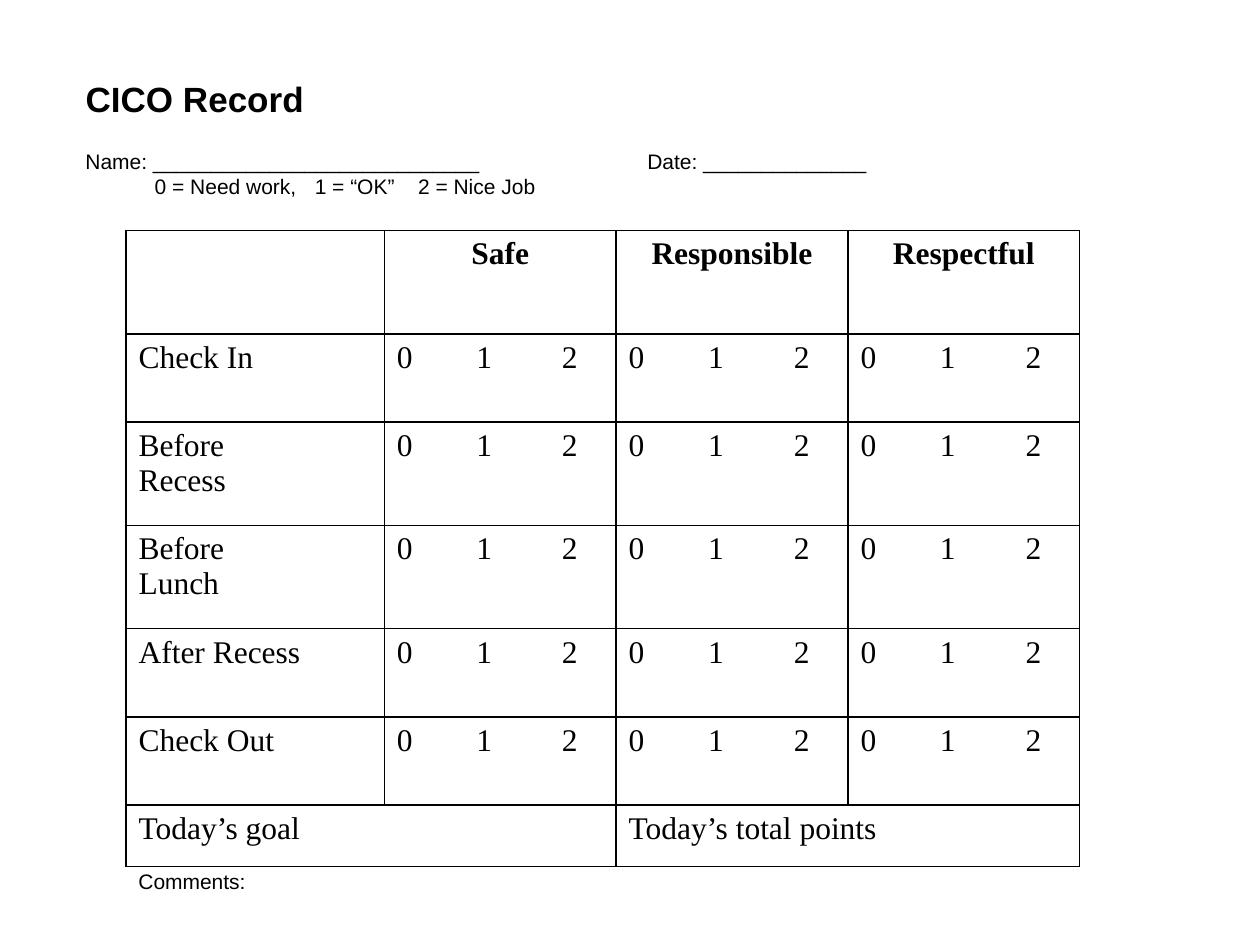
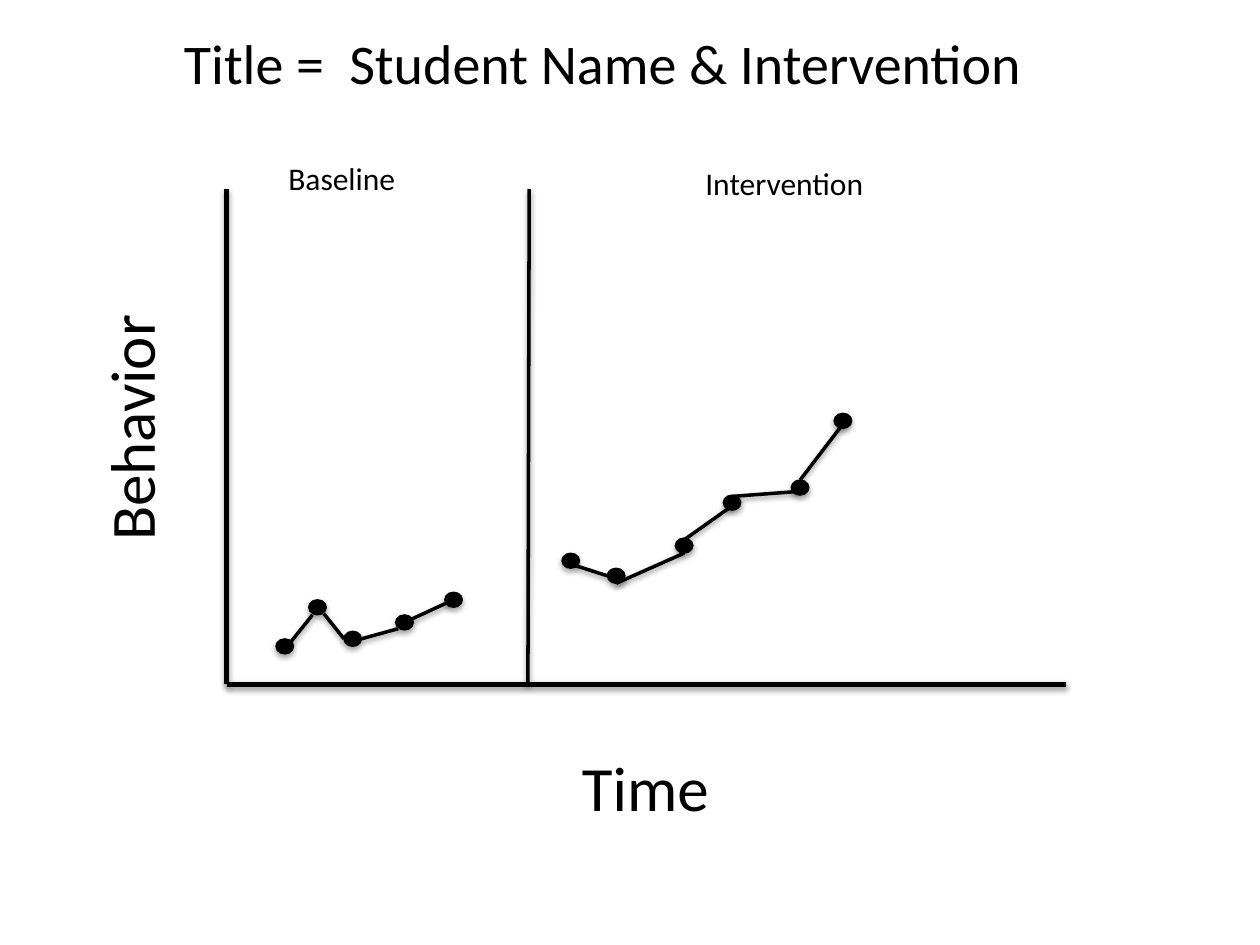
from lxml import etree
from pptx import Presentation
from pptx.dml.color import RGBColor
from pptx.enum.shapes import MSO_CONNECTOR, MSO_SHAPE
from pptx.enum.text import MSO_ANCHOR, MSO_AUTO_SIZE, PP_ALIGN
from pptx.oxml.ns import qn
from pptx.util import Emu, Pt

PX = 9144  # 100 px to the inch
BLACK = RGBColor(0, 0, 0)
LEFT, CENTER = PP_ALIGN.LEFT, PP_ALIGN.CENTER
TOP, MIDDLE = MSO_ANCHOR.TOP, MSO_ANCHOR.MIDDLE
NO_AUTOSIZE = MSO_AUTO_SIZE.NONE
STRAIGHT, ELLIPSE = MSO_CONNECTOR.STRAIGHT, MSO_SHAPE.OVAL
TITLE_ONLY = 5
BORDER_SIDES = ("a:lnL", "a:lnR", "a:lnT", "a:lnB")


def write(frame, text, size, font, bold=False, align=LEFT, tabs=()):
    """Fill a text frame, one paragraph a line, with tab stops in px."""
    frame.text = text
    for paragraph in frame.paragraphs:
        paragraph.alignment = align
        if tabs:
            properties = paragraph._p.get_or_add_pPr()
            tab_list = etree.SubElement(properties, qn("a:tabLst"))
            for tab in tabs:
                etree.SubElement(tab_list, qn("a:tab"), pos=str(tab * PX), algn="l")
        for run in paragraph.runs:
            for name, value in {"size": Pt(size), "name": font, "bold": bold}.items():
                setattr(run.font, name, value)
            run.font.color.rgb = BLACK


def place_text(shape, box, anchor=TOP, wrap=False):
    """Put a text shape at a box given in px and return its text frame."""
    for name, value in zip(("left", "top", "width", "height"), box):
        setattr(shape, name, Emu(value * PX))
    frame = shape.text_frame
    frame.auto_size = NO_AUTOSIZE
    frame.word_wrap = wrap
    frame.vertical_anchor = anchor
    return frame


presentation = Presentation()
presentation.slide_width = Emu(1000 * PX)
presentation.slide_height = Emu(750 * PX)
layout = presentation.slide_layouts[TITLE_ONLY]

# Slide 1: daily record form
slide = presentation.slides.add_slide(layout)
frame = place_text(slide.shapes.title, (58, 60, 917, 36), MIDDLE, True)
write(frame, "CICO Record", 20, "Arial", bold=True)

frame = place_text(slide.shapes.add_textbox(0, 0, 0, 0), (58, 112, 917, 51), MIDDLE, True)
write(
    frame,
    "Name: ____________________________\tDate: ______________\n"
    "\t0 = Need work,\t1 = “OK”\t2 = Nice Job",
    12, "Arial", tabs=(55, 182, 264, 446),
)

SCORES = "0\t1\t2"
headings = ["", "Safe", "Responsible", "Respectful"]
periods = ["Check In", "Before\nRecess", "Before\nLunch", "After Recess", "Check Out"]
record_rows = [headings]
record_rows += [[period] + [SCORES] * 3 for period in periods]
record_rows.append(["Today’s goal", "", "Today’s total points", ""])
column_widths = [205, 184, 184, 184]
row_heights = [82, 70, 82, 82, 70, 70, 49]

table = slide.shapes.add_table(
    len(row_heights), len(column_widths), 100 * PX, 183 * PX,
    sum(column_widths) * PX, sum(row_heights) * PX,
).table
table.first_row = table.horz_banding = False
for column, width in zip(table.columns, column_widths):
    column.width = Emu(width * PX)
for row, height in zip(table.rows, row_heights):
    row.height = Emu(height * PX)

for row_index, row_texts in enumerate(record_rows):
    is_heading = row_index == 0
    for column_index, text in enumerate(row_texts):
        cell = table.cell(row_index, column_index)
        write(
            cell.text_frame, text, 18, "Times New Roman", bold=is_heading,
            align=CENTER if is_heading else LEFT,
            tabs=(63, 131) if text == SCORES else (),
        )
        cell_properties = cell._tc.get_or_add_tcPr()
        for side in BORDER_SIDES:
            border = etree.SubElement(cell_properties, qn(side), w=str(Pt(1)))
            fill = etree.SubElement(border, qn("a:solidFill"))
            etree.SubElement(fill, qn("a:srgbClr"), val=str(BLACK))
        cell.fill.background()
last_row = len(record_rows) - 1
for first_column in (0, 2):
    table.cell(last_row, first_column).merge(table.cell(last_row, first_column + 1))

frame = place_text(slide.shapes.add_textbox(0, 0, 0, 0), (100, 684, 105, 30), MIDDLE)
write(frame, "Comments:", 12, "Arial")

# Slide 2: behavior graph
slide = presentation.slides.add_slide(layout)
frame = place_text(slide.shapes.title, (136, 18, 691, 64))
write(frame, "Title =  Student Name & Intervention", 32, "Calibri")

graph_labels = [
    ("Time", (452, 589, 122, 71), 36, 0),
    ("Behavior", (3, 303, 201, 71), 36, 270),
    ("Baseline", (219, 121, 106, 40), 18, 0),
    ("Intervention", (550, 125, 147, 40), 18, 0),
]
for text, box, size, rotation in graph_labels:
    label = slide.shapes.add_textbox(0, 0, 0, 0)
    label.rotation = rotation
    write(place_text(label, box), text, size, "Calibri")

axes = [(180, 150, 180, 543), (180, 543, 846, 543)]
phase_line = [(419, 543, 420, 150)]
baseline_segments = [
    (228, 513, 248, 488), (273, 507, 257, 487),
    (287, 507, 316, 499), (360, 476, 321, 494),
]
intervention_segments = [
    (457, 449, 482, 457), (543, 439, 489, 463), (586, 398, 538, 432),
    (634, 390, 581, 394), (674, 330, 635, 381),
]
thin_lines = phase_line + baseline_segments + intervention_segments
for lines, weight in ((axes, 3), (thin_lines, 2)):
    for ends in lines:
        connector = slide.shapes.add_connector(STRAIGHT, *(end * PX for end in ends))
        connector.line.color.rgb = BLACK
        connector.line.width = Pt(weight)

# The theme's soft shadow stays on the lines and data points
baseline_points = [(219, 507), (245, 476), (273, 501), (314, 488), (353, 470)]
intervention_points = [
    (446, 439), (482, 451), (536, 427), (574, 393), (628, 381), (662, 328),
]
for left, top in baseline_points + intervention_points:
    point = slide.shapes.add_shape(ELLIPSE, left * PX, top * PX, 14 * PX, 12 * PX)
    point.fill.solid()
    point.fill.fore_color.rgb = BLACK
    point.line.color.rgb = BLACK
    point.line.width = Pt(0.75)

presentation.save("out.pptx")
